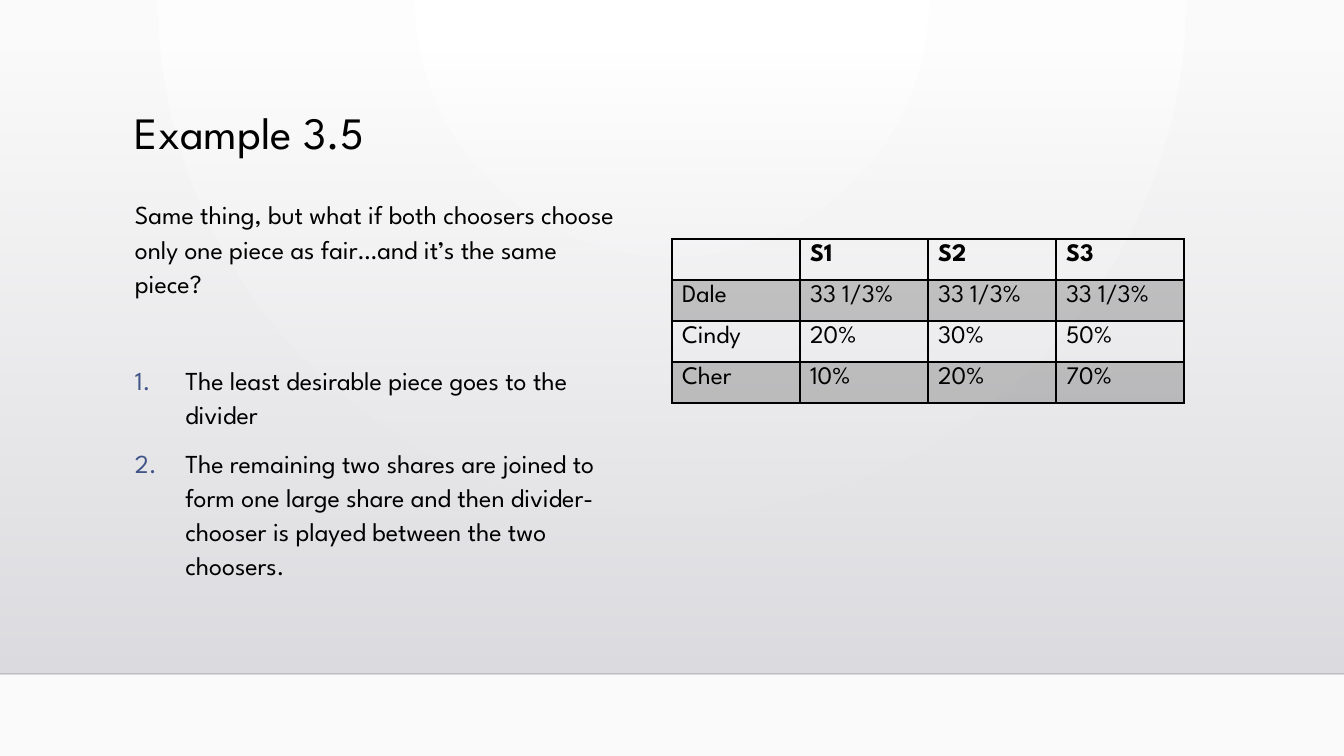
import pptx
import pptx.dml.color
import pptx.enum.shapes
import pptx.oxml
import pptx.oxml.ns
import pptx.util
from lxml import etree

BLACK = pptx.dml.color.RGBColor(0x00, 0x00, 0x00)
WHITE = pptx.dml.color.RGBColor(0xFF, 0xFF, 0xFF)
PALE = pptx.dml.color.RGBColor(0xFA, 0xFA, 0xFA)
FLOOR_TOP = pptx.dml.color.RGBColor(0xDC, 0xDC, 0xE0)
FLOOR_BOTTOM = pptx.dml.color.RGBColor(0xDE, 0xDE, 0xE2)
NUMBER_BLUE = pptx.dml.color.RGBColor(0x41, 0x55, 0x88)
FONT = "League Spartan"
PX = 914400 / 100.8
NS = 'xmlns:a="http://schemas.openxmlformats.org/drawingml/2006/main"'
qn = pptx.oxml.ns.qn


def px(*lengths):
    return [pptx.util.Emu(round(length * PX)) for length in lengths]


def write(paragraph, text, size=18, bold=False, spacing=None, before=0, numbered=False):
    paragraph.line_spacing = spacing
    paragraph.space_before = pptx.util.Pt(before)
    if numbered:
        properties = paragraph._p.get_or_add_pPr()
        properties.set("marL", "457200")
        properties.set("indent", "-457200")
        for bullet in (f'<a:buClr {NS}><a:srgbClr val="{NUMBER_BLUE}"/></a:buClr>',
                       f'<a:buAutoNum {NS} type="arabicPeriod"/>'):
            properties.append(pptx.oxml.parse_xml(bullet))
    run = paragraph.add_run()
    run.text = text
    run.font.name = FONT
    run.font.size = pptx.util.Pt(size)
    run.font.bold = bold
    run.font.color.rgb = BLACK


deck = pptx.Presentation()
deck.slide_width, deck.slide_height = px(1344, 756)
slide = deck.slides.add_slide(deck.slide_layouts[6])

# Background glow from the top centre
glow = slide.background.fill
glow.gradient()
for stop, color in zip(glow.gradient_stops, (WHITE, PALE)):
    stop.color.rgb = color
glow_xml = slide.background._cSld.find(".//" + qn("a:gradFill"))
glow_xml.replace(glow_xml.find(qn("a:lin")), pptx.oxml.parse_xml(
    f'<a:path {NS} path="circle"><a:fillToRect l="43000" t="0" r="43000" b="100000"/></a:path>'))

# Grey shade that fades in downwards
shade = slide.shapes.add_shape(pptx.enum.shapes.MSO_SHAPE.RECTANGLE, *px(0, 51, 1344, 623))
shade.shadow.inherit = False
shade.line.fill.background()
shade.fill.gradient()
shade.fill.gradient_angle = 270
for stop, color in zip(shade.fill.gradient_stops, (FLOOR_TOP, FLOOR_BOTTOM)):
    stop.color.rgb = color
first_color = shade._element.spPr.find(".//" + qn("a:srgbClr"))
etree.SubElement(first_color, qn("a:alpha"), val="0")

# Floor line
floor = slide.shapes.add_connector(pptx.enum.shapes.MSO_CONNECTOR.STRAIGHT, *px(0, 674, 1344, 674))
floor.line.width = pptx.util.Pt(1)
floor.line.color.rgb = BLACK
floor_properties = floor._element.spPr
etree.SubElement(floor_properties.find(".//" + qn("a:srgbClr")), qn("a:alpha"), val="20000")
etree.SubElement(floor_properties, qn("a:effectLst"))

# Title
title = slide.shapes.add_textbox(*px(125, 106, 1058, 117)).text_frame
title.word_wrap = True
write(title.paragraphs[0], "Example 3.5", size=32, spacing=0.9)

# Question and numbered steps
body = slide.shapes.add_textbox(*px(125, 191, 512, 459)).text_frame
body.word_wrap = True
write(body.paragraphs[0],
      "Same thing, but what if both choosers choose only one piece as fair…and it’s the same piece?",
      size=18.5, spacing=1.1)
STEPS = [
    ("The least desirable piece goes to the divider", 45),
    ("The remaining two shares are joined to form one large share and then "
     "divider-chooser is played between the two choosers.", 10),
]
for step, gap in STEPS:
    write(body.add_paragraph(), step, size=18.5, spacing=1.1, before=gap, numbered=True)

# Table of share values
SHARES = [
    ["", "S1", "S2", "S3"],
    ["Dale", "33 1/3%", "33 1/3%", "33 1/3%"],
    ["Cindy", "20%", "30%", "50%"],
    ["Cher", "10%", "20%", "70%"],
]
shares = slide.shapes.add_table(4, 4, *px(672, 239, 512, 164)).table
shares.first_row = shares.horz_banding = False
for row_index, values in enumerate(SHARES):
    shares.rows[row_index].height = px(41)[0]
    for column_index, value in enumerate(values):
        cell = shares.cell(row_index, column_index)
        cell.margin_top = cell.margin_bottom = pptx.util.Inches(0.05)
        if value:
            write(cell.text_frame.paragraphs[0], value, bold=row_index == 0)
        cell_properties = cell._tc.get_or_add_tcPr()
        # A heavier rule parts the header from the rows
        for side in ("lnL", "lnR", "lnT", "lnB"):
            heavy = (row_index, side) in ((0, "lnB"), (1, "lnT"))
            cell_properties.append(pptx.oxml.parse_xml(
                f'<a:{side} {NS} w="{25400 if heavy else 12700}" cmpd="sng"><a:solidFill>'
                f'<a:srgbClr val="{BLACK}"/></a:solidFill><a:prstDash val="solid"/></a:{side}>'))
        if row_index % 2:
            cell.fill.solid()
            cell.fill.fore_color.rgb = BLACK
            tint = cell_properties.find(qn("a:solidFill") + "/" + qn("a:srgbClr"))
            etree.SubElement(tint, qn("a:alpha"), val="20000")
        else:
            cell.fill.background()

deck.save("out.pptx")
